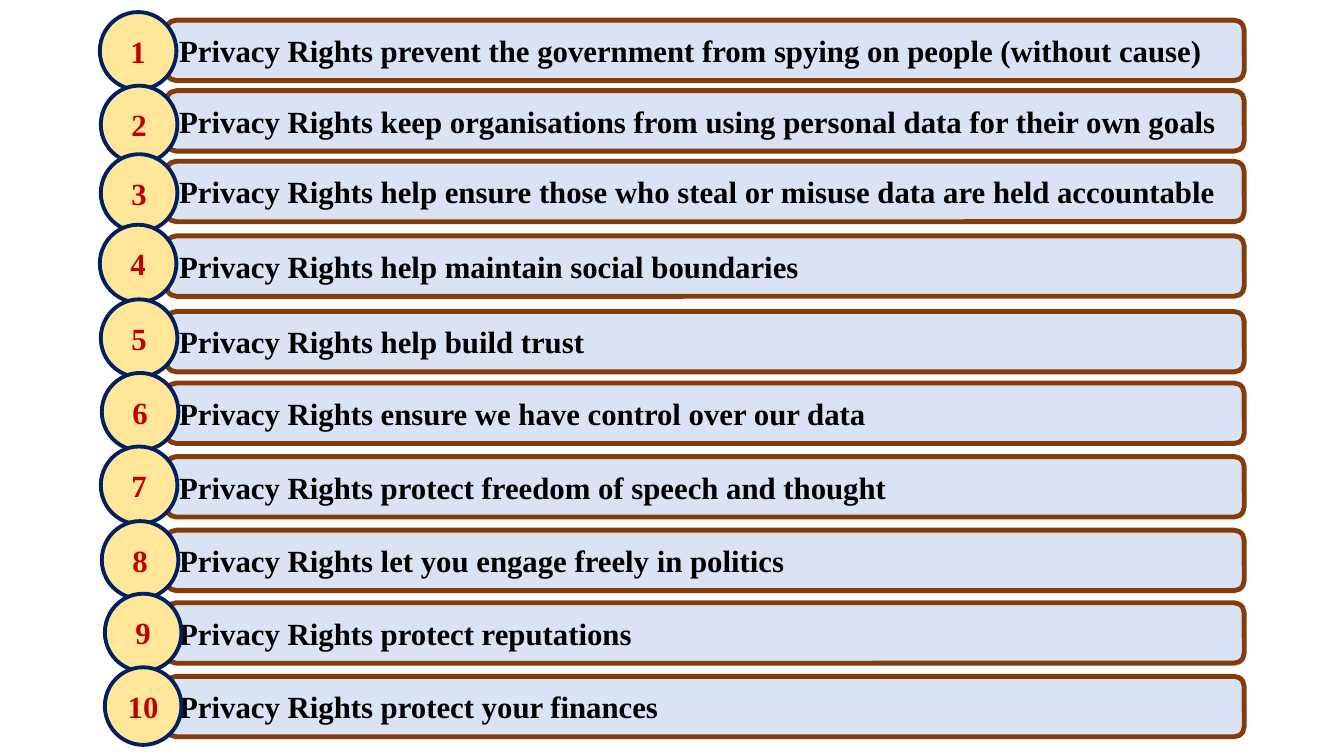
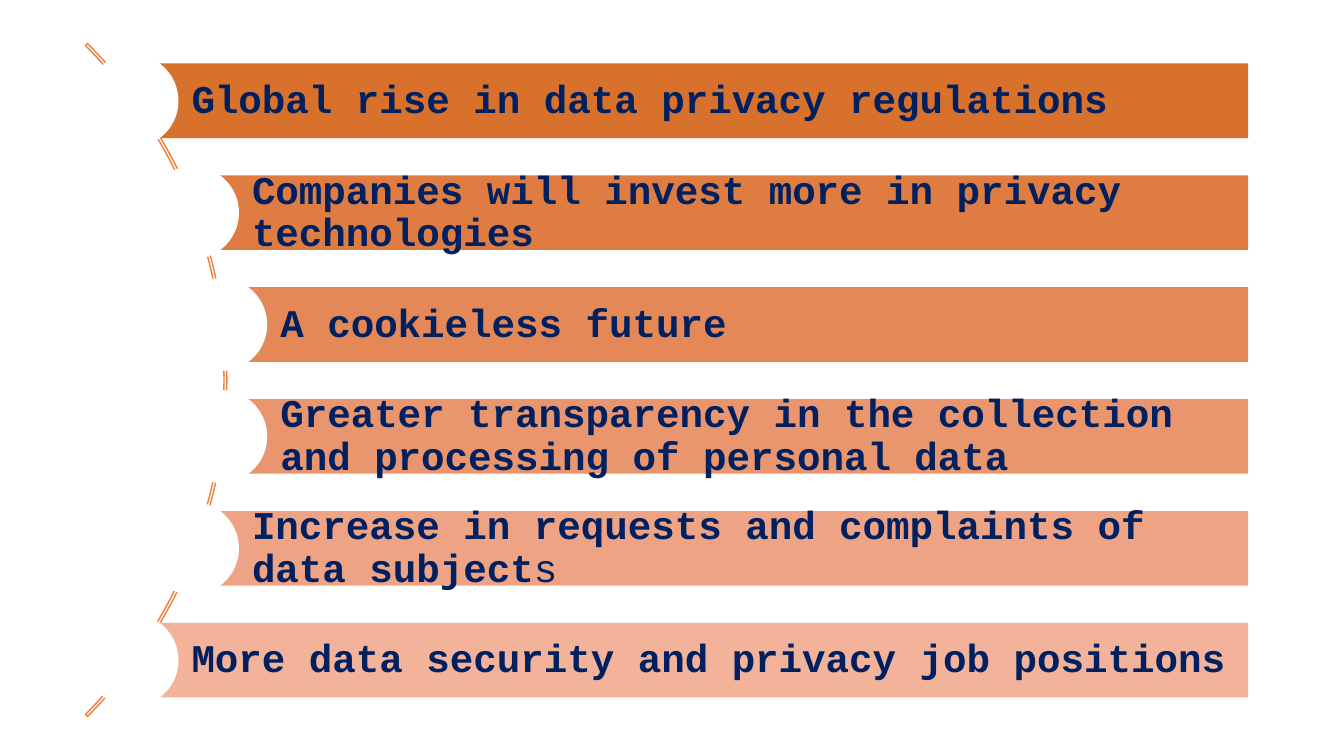
from pptx import Presentation
from pptx.dml.color import RGBColor
from pptx.enum.shapes import MSO_SHAPE
from pptx.enum.text import MSO_ANCHOR, PP_ALIGN
from pptx.util import Inches, Pt

BLACK = RGBColor(0x00, 0x00, 0x00)
WHITE = RGBColor(0xFF, 0xFF, 0xFF)
NAVY = RGBColor(0x00, 0x20, 0x60)
RED = RGBColor(0xC0, 0x00, 0x00)
PALE_BLUE = RGBColor(0xDA, 0xE3, 0xF3)
PALE_YELLOW = RGBColor(0xFF, 0xE6, 0x99)
BROWN = RGBColor(0x84, 0x3C, 0x0B)
ORANGE = RGBColor(0xED, 0x7F, 0x39)

SERIF = "Times New Roman"
MONO = "Courier New"

RIGHTS = [
    ("prevent the government from spying on people (without cause)", 0.2, 0.99, 0.12),
    ("keep organisations from using personal data for their own goals", 0.9, 1, 0.85),
    ("help ensure those who steal or misuse data are held accountable", 1.6, 1, 1.53),
    ("help maintain social boundaries", 2.34, 0.99, 2.23),
    ("help build trust", 3.09, 1, 2.97),
    ("ensure we have control over our data", 3.8, 1.01, 3.7),
    ("protect freedom of speech and thought", 4.53, 1, 4.43),
    ("let you engage freely in politics", 5.26, 1.01, 5.17),
    ("protect reputations", 5.98, 1.04, 5.89),
    ("protect your finances", 6.71, 1.04, 6.62),
]

TRENDS = [
    (["Global rise in data privacy regulations"], 1.31, RGBColor(0xD7, 0x71, 0x2C)),
    (["Companies will invest more in privacy technologies"], 1.91, RGBColor(0xDE, 0x7C, 0x41)),
    (["A cookieless future"], 2.19, RGBColor(0xE4, 0x88, 0x57)),
    (["Greater transparency in the collection and processing of personal data"],
     2.19, RGBColor(0xE9, 0x95, 0x6D)),
    (["Increase in requests and complaints of data subject", "s"],
     1.91, RGBColor(0xEE, 0xA3, 0x84)),
    (["More data security and privacy job positions"], 1.31, RGBColor(0xF3, 0xB3, 0x9B)),
]
TREND_TOP = 0.63
TREND_STEP = 1.11
TREND_RIGHT = 12.38


def add_figure(page, kind, left, top, width, height, fill=None, line=None, weight=1):
    figure = page.shapes.add_shape(
        kind, Inches(left), Inches(top), Inches(width), Inches(height))
    figure.shadow.inherit = False
    if fill is None:
        figure.fill.background()
    else:
        figure.fill.solid()
        figure.fill.fore_color.rgb = fill
    if line is None:
        figure.line.fill.background()
    else:
        figure.line.color.rgb = line
        figure.line.width = Pt(weight)
    return figure


def write_text(figure, texts, font_name, size, color, align):
    frame = figure.text_frame
    frame.word_wrap = True
    frame.vertical_anchor = MSO_ANCHOR.MIDDLE
    para = frame.paragraphs[0]
    para.alignment = align
    for text in texts:
        para.add_run().text = text
    font = para.font
    font.name = font_name
    font.size = Pt(size)
    font.bold = True
    font.color.rgb = color
    return para


def add_right_bar(page, text, top):
    bar = add_figure(page, MSO_SHAPE.ROUNDED_RECTANGLE, 1.65, top, 10.69, 0.6,
                     PALE_BLUE, BROWN, 3.5)
    write_text(bar, [f"Privacy Rights {text}"], SERIF, 22, BLACK, PP_ALIGN.JUSTIFY)


def add_number(page, number, left, top):
    circle = add_figure(page, MSO_SHAPE.OVAL, left, top, 0.76, 0.77,
                        PALE_YELLOW, NAVY, 2.75)
    circle.text_frame.margin_left = circle.text_frame.margin_right = Inches(0.05)
    write_text(circle, [str(number)], SERIF, 22, RED, PP_ALIGN.CENTER)


def add_trend(page, texts, left, top, fill):
    bar = add_figure(page, MSO_SHAPE.RECTANGLE, left, top, TREND_RIGHT - left, 0.74, fill)
    frame = bar.text_frame
    frame.margin_left = Inches(0.59)
    frame.margin_top = frame.margin_right = frame.margin_bottom = Inches(0.08)
    para = write_text(bar, texts, MONO, 28, NAVY, PP_ALIGN.LEFT)
    para.line_spacing = 0.9
    for span in para.runs[1:]:
        span.font.bold = False
    add_figure(page, MSO_SHAPE.OVAL, left - 0.46, top - 0.09, 0.92, 0.92, WHITE)


def build_rights(page):
    for text, bar_top, _, _ in RIGHTS:
        add_right_bar(page, text, bar_top)
    for number, (_, _, left, top) in enumerate(RIGHTS, 1):
        add_number(page, number, left, top)


def build_trends(page):
    arc = add_figure(page, MSO_SHAPE.BLOCK_ARC, -7.19, -0.95, 9.44, 9.44, line=ORANGE)
    for index, value in enumerate((189, 27, 0.003)):
        arc.adjustments[index] = value
    for index, (texts, left, fill) in enumerate(TRENDS):
        add_trend(page, texts, left, TREND_TOP + index * TREND_STEP, fill)


def main():
    deck = Presentation()
    deck.slide_width = Inches(13.33)
    deck.slide_height = Inches(7.5)
    blank = deck.slide_layouts[6]
    for build in (build_rights, build_trends):
        build(deck.slides.add_slide(blank))
    deck.save("out.pptx")


if __name__ == "__main__":
    main()
